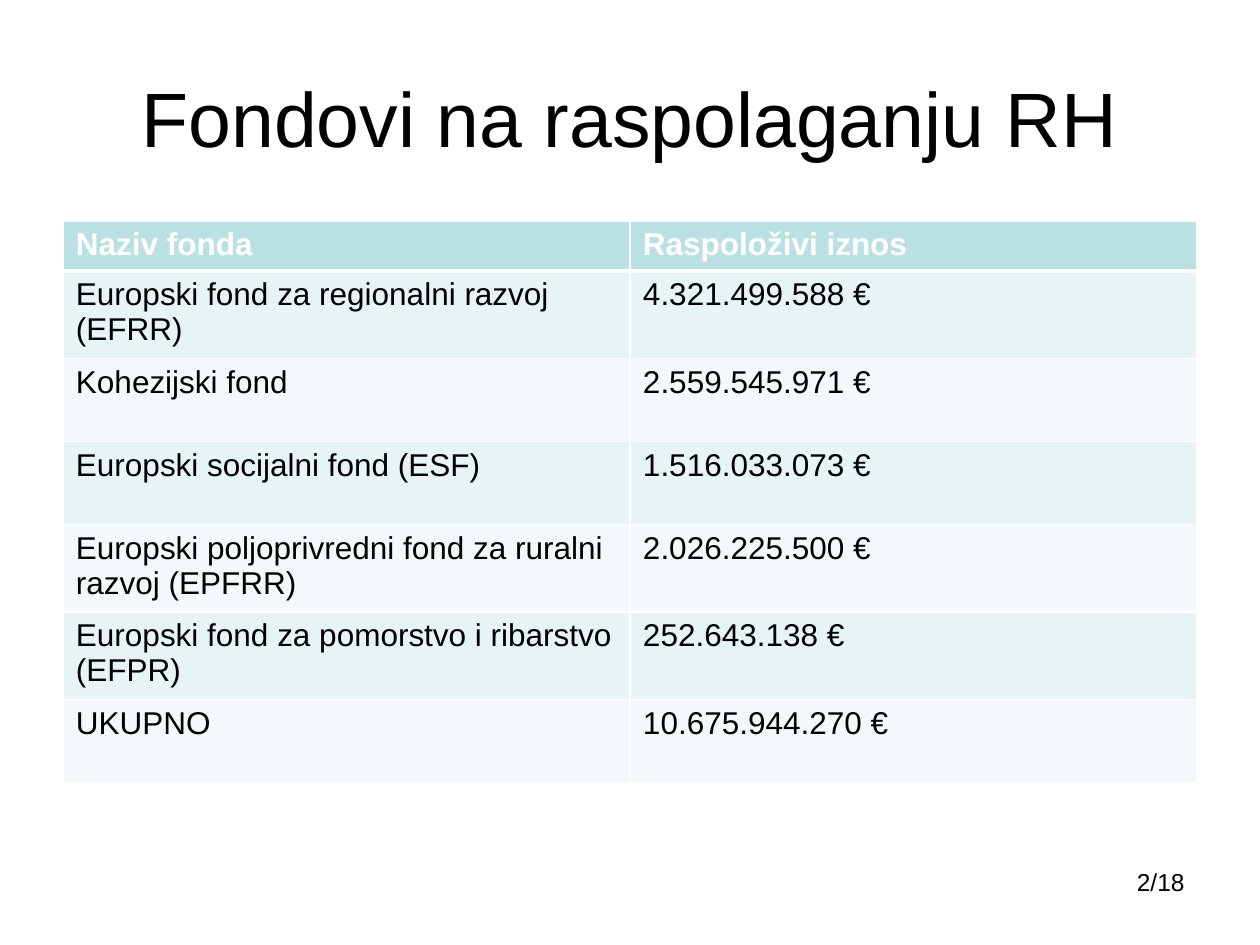
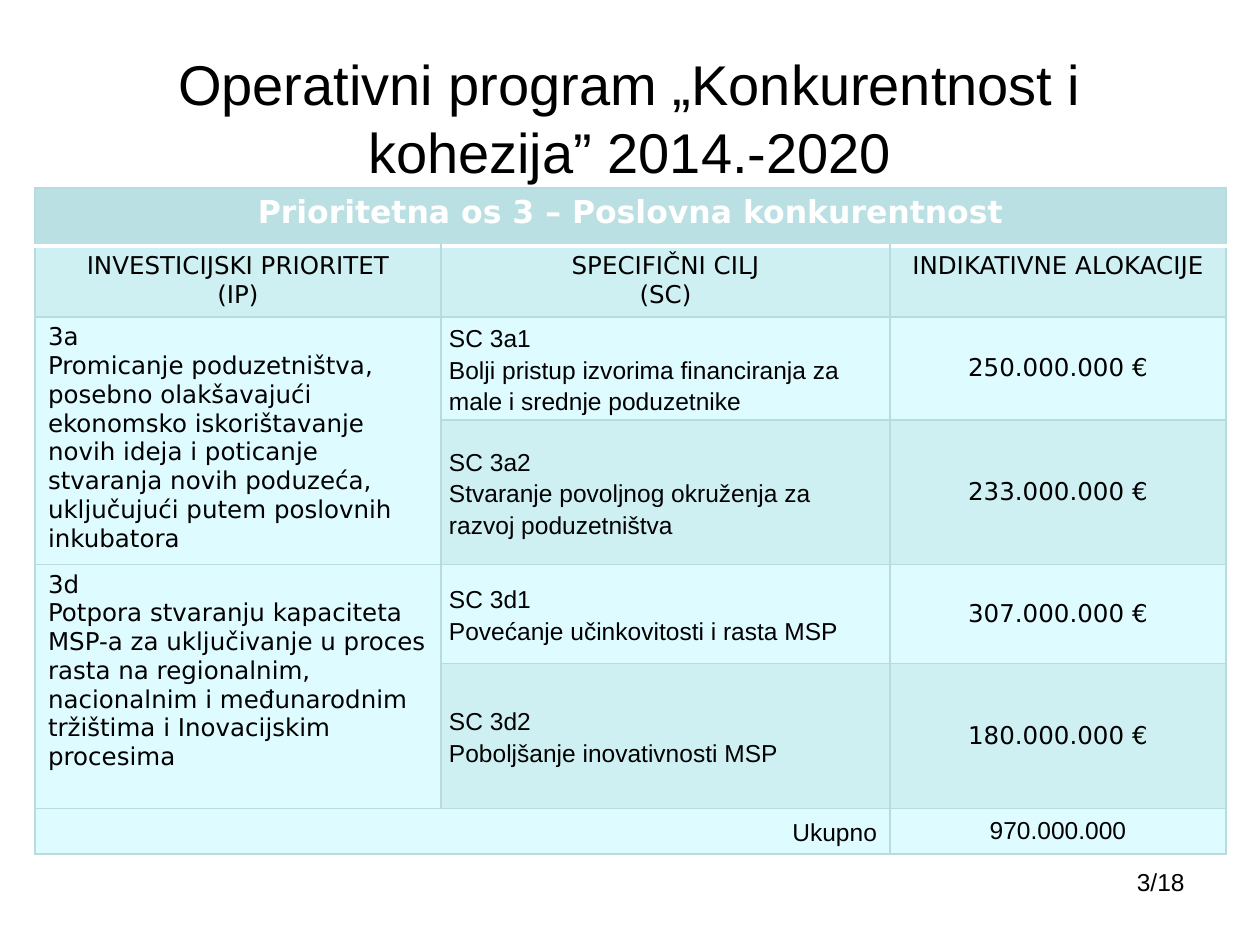
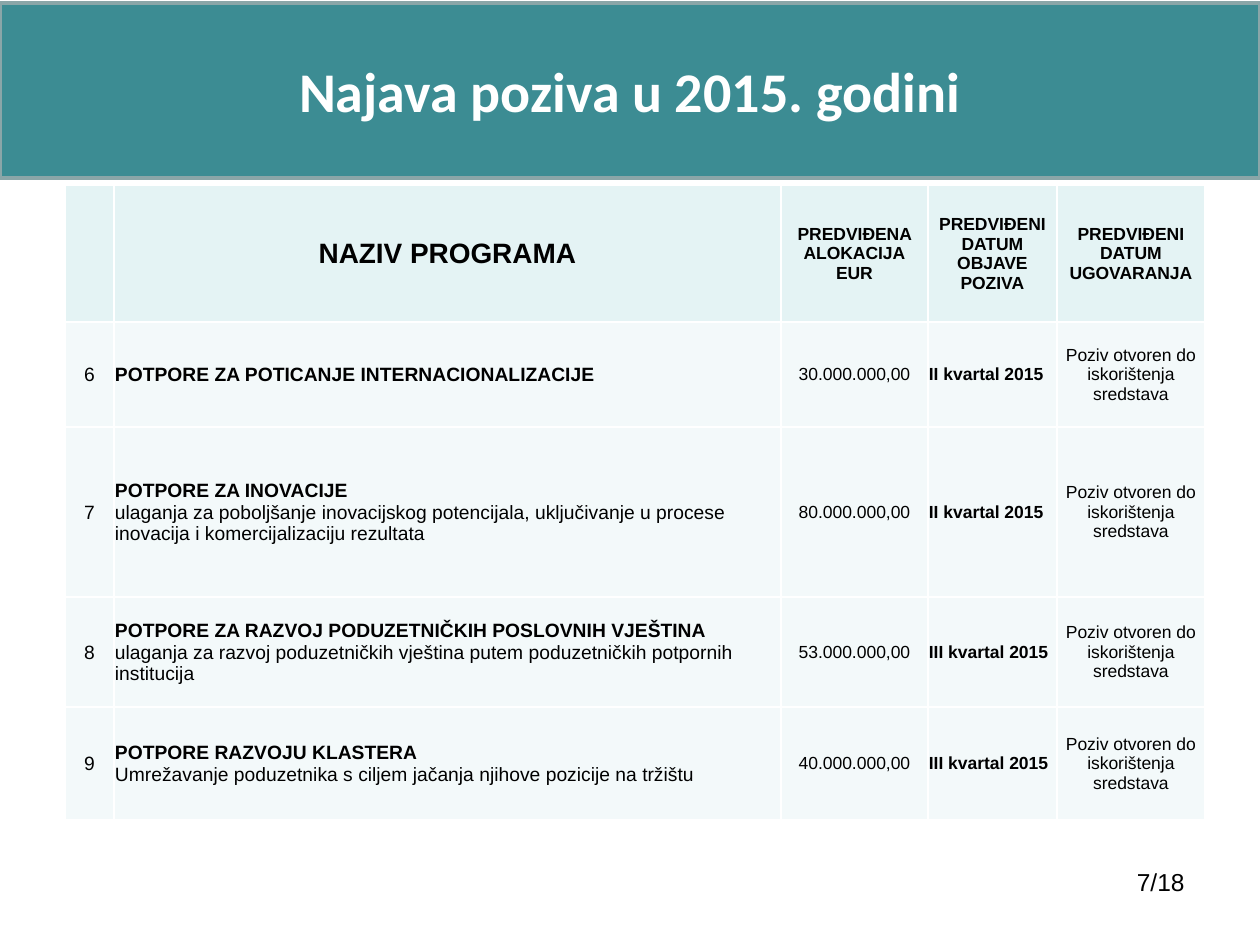
from dataclasses import dataclass, field, replace
from itertools import accumulate
from typing import Optional

from lxml import etree
from pptx import Presentation
from pptx.dml.color import RGBColor
from pptx.enum import shapes, text
from pptx.oxml import ns
from pptx.util import Emu, Pt

EMU_PER_PX = 914400 / 126
LEFT, CENTER, RIGHT = text.PP_ALIGN.LEFT, text.PP_ALIGN.CENTER, text.PP_ALIGN.RIGHT
TOP, MIDDLE = text.MSO_ANCHOR.TOP, text.MSO_ANCHOR.MIDDLE


@dataclass(frozen=True)
class Theme:
    white: str = "FFFFFF"
    black: str = "000000"
    header: str = "BBE0E3"
    band: str = "E7F3F4"
    pale: str = "F3F9FA"
    heading: str = "E4F3F4"
    axis_band: str = "CFF0F3"
    axis_pale: str = "DEFBFF"
    axis_border: str = "B6DCDF"
    banner: str = "3C8C93"
    banner_line: str = "8AA6A8"
    sans: str = "Arial"
    display: str = "Calibri"
    wide: str = "DejaVu Sans"
    title: int = 44
    subtitle: int = 32
    table: int = 18
    program: int = 16
    body: int = 14
    detail: int = 11
    small: int = 10


THEME = Theme()


@dataclass(frozen=True)
class Style:
    size: int = THEME.body
    font: str = THEME.sans
    color: str = THEME.black
    bold: bool = False
    align: text.PP_ALIGN = LEFT
    spacing: Optional[float] = None


@dataclass(frozen=True)
class Line:
    words: str
    style: Style


@dataclass(frozen=True)
class Inset:
    left: int = 13
    top: int = 6
    right: int = 13
    bottom: int = 6


@dataclass(frozen=True)
class Cell:
    lines: tuple[Line, ...]
    fill: str
    anchor: text.MSO_ANCHOR = TOP
    inset: Inset = Inset()
    span: tuple[int, int] = (1, 1)


@dataclass(frozen=True)
class Border:
    color: str
    width: float


@dataclass(frozen=True)
class Grid:
    """A table; a None cell is covered by a merged neighbour."""
    left: int
    top: int
    columns: list[int]
    rows: list[int]
    cells: list[list[Optional[Cell]]]
    border: Border
    rule: Optional[Border] = field(default=None)


def px(length: int) -> Emu:
    return Emu(round(length * EMU_PER_PX))


def set_all(target, values: dict) -> None:
    for name, value in values.items():
        setattr(target, name, value)


def lines_of(style: Style, *words: str) -> tuple[Line, ...]:
    return tuple(Line(item, style) for item in words)


def write(frame, lines: tuple[Line, ...]) -> None:
    for index, line in enumerate(lines):
        para = frame.add_paragraph() if index else frame.paragraphs[0]
        style = line.style
        set_all(para, {"alignment": style.align, "line_spacing": style.spacing})
        span = para.add_run()
        span.text = line.words
        set_all(span.font, {"name": style.font, "size": Pt(style.size), "bold": style.bold})
        span.font.color.rgb = RGBColor.from_string(style.color)


def paint(target, color: str) -> None:
    target.fill.solid()
    target.fill.fore_color.rgb = RGBColor.from_string(color)


def add_text(page, area: tuple[int, int, int, int], line: Line, anchor=TOP) -> None:
    box = page.shapes.add_textbox(*map(px, area))
    set_all(box.text_frame, {"word_wrap": True, "vertical_anchor": anchor})
    write(box.text_frame, (line,))


def add_title(page, words: str, size: int) -> None:
    add_text(page, (63, 38, 1134, 158), Line(words, Style(size, align=CENTER)), MIDDLE)


def add_page_number(page, number: int) -> None:
    add_text(page, (903, 861, 294, 66), Line(f"{number}/18", Style(align=RIGHT)))


def add_banner(page, words: str) -> None:
    banner = page.shapes.add_shape(shapes.MSO_SHAPE.RECTANGLE, *map(px, (0, 3, 1260, 175)))
    banner.shadow.inherit = False
    paint(banner, THEME.banner)
    banner.line.color.rgb = RGBColor.from_string(THEME.banner_line)
    banner.line.width = Pt(2)
    set_all(banner.text_frame, {"word_wrap": True, "vertical_anchor": MIDDLE})
    style = Style(THEME.subtitle, THEME.display, THEME.white, True, CENTER)
    write(banner.text_frame, lines_of(style, words))


def draw_borders(cell, edges: dict[str, Border]) -> None:
    """Put the edge lines ahead of the fill, where the schema wants them."""
    properties = cell._tc.get_or_add_tcPr()
    for index, (edge, border) in enumerate(edges.items()):
        outline = etree.Element(ns.qn(f"a:{edge}"), w=str(Pt(border.width)))
        solid = etree.SubElement(outline, ns.qn("a:solidFill"))
        etree.SubElement(solid, ns.qn("a:srgbClr"), val=border.color)
        properties.insert(index, outline)


def fill_cell(target, cell: Cell) -> None:
    paint(target, cell.fill)
    inset = cell.inset
    set_all(target, {
        "vertical_anchor": cell.anchor,
        "margin_left": px(inset.left), "margin_top": px(inset.top),
        "margin_right": px(inset.right), "margin_bottom": px(inset.bottom),
    })
    write(target.text_frame, cell.lines)


def add_grid(page, grid: Grid) -> None:
    frame = page.shapes.add_table(
        len(grid.rows), len(grid.columns), px(grid.left), px(grid.top),
        px(sum(grid.columns)), px(sum(grid.rows)))
    table = frame.table
    set_all(table, {"first_row": False, "horz_banding": False})
    for column, width in zip(table.columns, grid.columns):
        column.width = px(width)
    for row, height in zip(table.rows, grid.rows):
        row.height = px(height)
    for y, row in enumerate(grid.cells):
        for x, cell in enumerate(row):
            target = table.cell(y, x)
            if cell:
                fill_cell(target, cell)
                if cell.span != (1, 1):
                    target.merge(table.cell(y + cell.span[0] - 1, x + cell.span[1] - 1))
            edges = dict.fromkeys(("lnL", "lnR", "lnT", "lnB"), grid.border)
            if grid.rule and y < 2:
                edges["lnT" if y else "lnB"] = grid.rule
            draw_borders(target, edges)


def build_funds(page) -> None:
    add_title(page, "Fondovi na raspolaganju RH", THEME.title)
    funds = [
        ("Naziv fonda", "Raspoloživi iznos"),
        ("Europski fond za regionalni razvoj (EFRR)", "4.321.499.588 €"),
        ("Kohezijski fond", "2.559.545.971 €"),
        ("Europski socijalni fond (ESF)", "1.516.033.073 €"),
        ("Europski poljoprivredni fond za ruralni razvoj (EPFRR)", "2.026.225.500 €"),
        ("Europski fond za pomorstvo i ribarstvo (EFPR)", "252.643.138 €"),
        ("UKUPNO", "10.675.944.270 €"),
    ]
    body = Style(THEME.table)
    header = replace(body, color=THEME.white, bold=True)
    cells = []
    for index, fund in enumerate(funds):
        fill = (THEME.band if index % 2 else THEME.pale) if index else THEME.header
        style = body if index else header
        cells.append([Cell(lines_of(style, words), fill) for words in fund])
    add_grid(page, Grid(63, 221, [567] * 2, [50] + [83] * 6, cells,
                        Border(THEME.white, 1), Border(THEME.white, 3)))


def build_priorities(page) -> None:
    add_title(page, "Operativni program „Konkurentnost i kohezija” 2014.-2020", THEME.subtitle)
    wide = Style(font=THEME.wide)
    centered = replace(wide, align=CENTER)
    goal_style = Style(spacing=1.15)
    banner = replace(centered, size=THEME.table, color=THEME.white, bold=True)
    headings = [("INVESTICIJSKI PRIORITET", "(IP)"), ("SPECIFIČNI CILJ", "(SC)"),
                ("INDIKATIVNE ALOKACIJE",)]
    priorities = [
        (("3a", "Promicanje poduzetništva, posebno olakšavajući ekonomsko iskorištavanje "
                "novih ideja i poticanje stvaranja novih poduzeća, uključujući putem "
                "poslovnih inkubatora"),
         [("SC 3a1", "Bolji pristup izvorima financiranja za male i srednje poduzetnike",
           "250.000.000 €"),
          ("SC 3a2", "Stvaranje povoljnog okruženja za razvoj poduzetništva",
           "233.000.000 €")]),
        (("3d", "Potpora stvaranju kapaciteta MSP-a za uključivanje u proces rasta na "
                "regionalnim, nacionalnim i međunarodnim tržištima i Inovacijskim procesima"),
         [("SC 3d1", "Povećanje učinkovitosti i rasta MSP", "307.000.000 €"),
          ("SC 3d2", "Poboljšanje inovativnosti MSP", "180.000.000 €")]),
    ]
    cells = [
        [Cell(lines_of(banner, "Prioritetna os 3 – Poslovna konkurentnost"), THEME.header,
              span=(1, 3)), None, None],
        [Cell(lines_of(centered, *words), THEME.axis_band) for words in headings],
    ]
    for priority, goals in priorities:
        for index, (code, goal, amount) in enumerate(goals):
            fill = THEME.axis_band if index else THEME.axis_pale
            lead = None if index else Cell(lines_of(wide, *priority), fill, span=(len(goals), 1))
            cells.append([
                lead,
                Cell(lines_of(goal_style, code, goal), fill, MIDDLE, Inset(8, 0, 8, 0)),
                Cell(lines_of(centered, amount), fill, MIDDLE),
            ])
    cells.append([
        Cell(lines_of(replace(goal_style, align=RIGHT), "Ukupno"), THEME.axis_pale, MIDDLE,
             span=(1, 2)),
        None,
        Cell(lines_of(Style(align=CENTER), "970.000.000"), THEME.axis_pale, MIDDLE),
    ])
    add_grid(page, Grid(35, 188, [406, 449, 336], [58, 71, 103, 139, 99, 145, 44], cells,
                        Border(THEME.axis_border, 0.75), Border(THEME.white, 2)))


def build_calls(page) -> None:
    add_banner(page, "Najava poziva u 2015. godini")
    detail = Style(THEME.detail)
    small = Style(THEME.small)
    small_center = replace(small, align=CENTER)
    heading = replace(small_center, bold=True)

    def snug(lines: tuple[Line, ...], fill: str = THEME.pale) -> Cell:
        """Return a cell with almost no margins."""
        return Cell(lines, fill, MIDDLE, Inset(1, 1, 1, 0))

    headings = [
        (),
        lines_of(replace(heading, size=THEME.program), "NAZIV PROGRAMA"),
        lines_of(heading, "PREDVIĐENA ALOKACIJA", "EUR"),
        lines_of(heading, "PREDVIĐENI DATUM OBJAVE POZIVA"),
        lines_of(heading, "PREDVIĐENI DATUM UGOVARANJA"),
    ]
    programs = [
        ("POTPORE ZA POTICANJE INTERNACIONALIZACIJE", (), "30.000.000,00", "II"),
        ("POTPORE ZA INOVACIJE",
         ("ulaganja za poboljšanje inovacijskog potencijala, uključivanje u procese "
          "inovacija i komercijalizaciju rezultata",), "80.000.000,00", "II"),
        ("POTPORE ZA RAZVOJ PODUZETNIČKIH POSLOVNIH VJEŠTINA",
         ("ulaganja za razvoj poduzetničkih vještina putem poduzetničkih potpornih "
          "institucija",), "53.000.000,00", "III"),
        ("POTPORE RAZVOJU KLASTERA",
         ("Umrežavanje poduzetnika s ciljem jačanja njihove pozicije na tržištu",),
         "40.000.000,00", "III"),
    ]
    cells = [[snug(lines, THEME.heading) for lines in headings]]
    for number, (name, notes, amount, quarter) in enumerate(programs, start=6):
        cells.append([snug(lines) for lines in (
            lines_of(replace(detail, align=CENTER), str(number)),
            lines_of(replace(detail, bold=True), name) + lines_of(detail, *notes),
            lines_of(small_center, amount),
            lines_of(replace(small, bold=True), f"{quarter} kvartal 2015"),
            lines_of(small_center, "Poziv otvoren do iskorištenja sredstava"),
        )])
    edges = [65, 114, 781, 928, 1057, 1205]
    columns = [right - left for left, right in zip(edges, edges[1:])]
    add_grid(page, Grid(edges[0], 185, columns, [137, 105, 170, 110, 113], cells,
                        Border(THEME.white, 1)))


def main() -> None:
    deck = Presentation()
    set_all(deck, {"slide_width": px(1260), "slide_height": px(945)})
    for number, build in ((2, build_funds), (3, build_priorities), (7, build_calls)):
        page = deck.slides.add_slide(deck.slide_layouts[6])
        build(page)
        add_page_number(page, number)
    deck.save("out.pptx")


if __name__ == "__main__":
    main()
